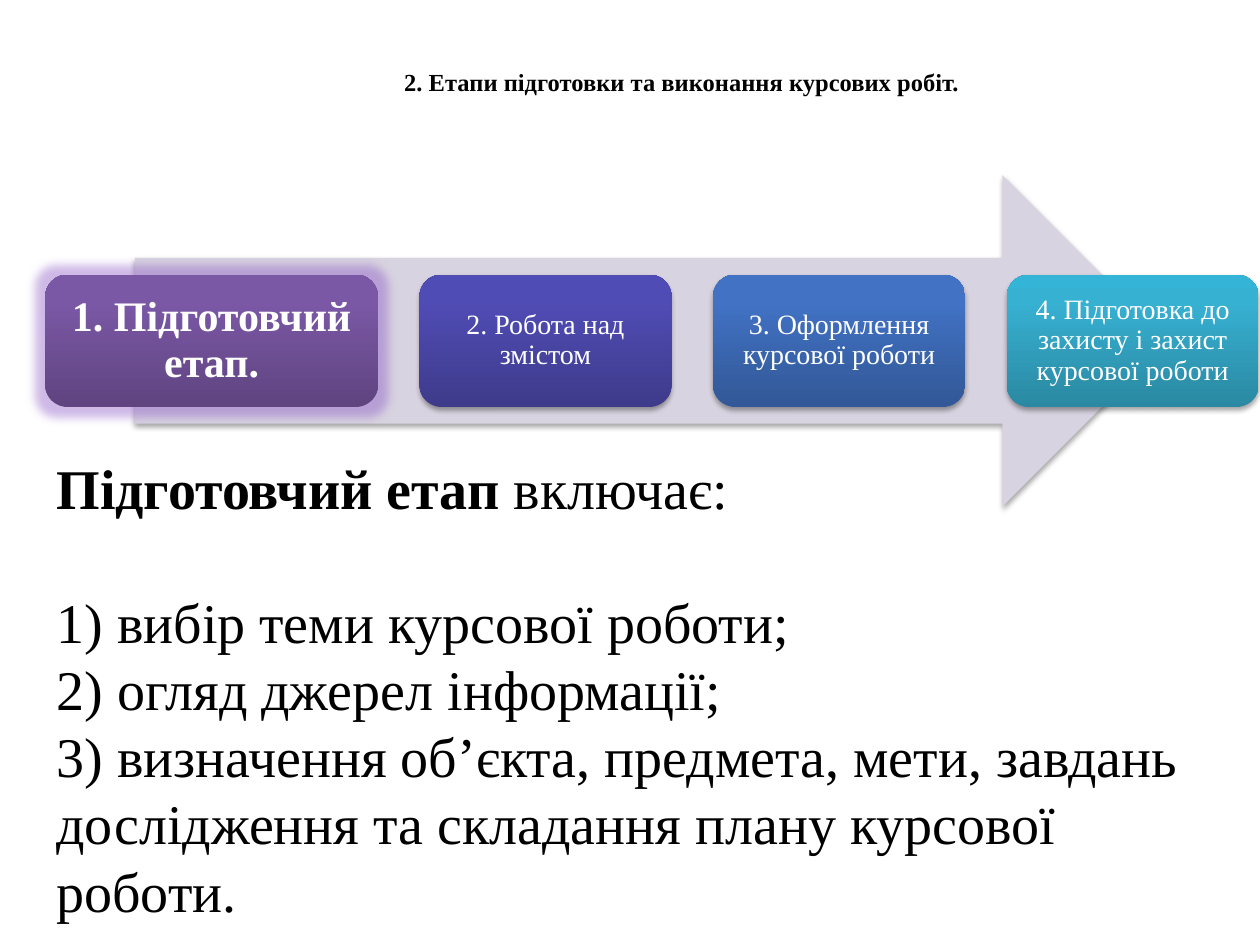
from lxml import etree
from pptx import Presentation
from pptx.dml.color import RGBColor
from pptx.enum import shapes, text
from pptx.oxml import ns
from pptx.util import Inches, Pt

FONT = "Times New Roman"
COLORS = {"arrow": "D8D3E0", "ink": "000000", "light": "FFFFFF", "glow": "8650C4"}
TITLE = "2. Етапи підготовки та виконання курсових робіт."
# Stage label and its gradient from bottom to top
STAGES = [
    ("1. Підготовчий етап.", ("5F4480", "7B58A6", "7C57A8")),
    ("2. Робота над змістом", ("3E3B8B", "504CB5", "4F4BB8")),
    ("3. Оформлення курсової роботи", ("325897", "4172C4", "3F72C7")),
    ("4. Підготовка до захисту і захист курсової роботи",
     ("2A88A2", "37B1D2", "34B4D6")),
]
HEAD = [("Підготовчий етап ", True), ("включає:", False)]
TASKS = [
    "1) вибір теми курсової роботи;",
    "2) огляд джерел інформації;",
    "3) визначення об’єкта, предмета, мети, завдань дослідження "
    "та складання плану курсової роботи.",
]
ALIGN, ANCHOR = text.PP_ALIGN, text.MSO_ANCHOR


def write(frame, paras, size, color="ink", align=ALIGN.LEFT,
          anchor=ANCHOR.TOP, inset=(0.1, 0.05), line=None):
    """Fill a frame; each paragraph is a list of (text, bold) runs."""
    frame.word_wrap = True
    frame.vertical_anchor = anchor
    frame.margin_left = frame.margin_right = Inches(inset[0])
    frame.margin_top = frame.margin_bottom = Inches(inset[1])
    for i, runs in enumerate(paras):
        para = frame.add_paragraph() if i else frame.paragraphs[0]
        para.alignment = align
        if line:
            para.line_spacing = line
        for words, bold in runs:
            run = para.add_run()
            run.text = words
            font = run.font
            font.name, font.size, font.bold = FONT, Pt(size), bold
            font.color.rgb = RGBColor.from_string(COLORS[color])


def add_xml(shape, body):
    root = etree.fromstring(f'<r {ns.nsdecls("a")}>{body}</r>')
    return shape._element.spPr, root[0]


def effect(shape, glow=False):
    """Give a soft drop shadow, or a glow for the current stage."""
    if glow:
        inner = (f'<a:glow rad="{Pt(11)}"><a:srgbClr val="{COLORS["glow"]}">'
                 '<a:alpha val="40000"/></a:srgbClr></a:glow>')
    else:
        inner = (f'<a:outerShdw blurRad="{Pt(3.1)}" dist="{Pt(1.8)}" dir="5400000" '
                 f'rotWithShape="0"><a:srgbClr val="{COLORS["ink"]}">'
                 '<a:alpha val="35000"/></a:srgbClr></a:outerShdw>')
    props, node = add_xml(shape, f"<a:effectLst>{inner}</a:effectLst>")
    props.append(node)


def shade(shape, colors):
    stops = "".join(f'<a:gs pos="{pos * 1000}"><a:srgbClr val="{c}"/></a:gs>'
                    for pos, c in zip((0, 80, 100), colors))
    props, node = add_xml(shape, f'<a:gradFill rotWithShape="1"><a:gsLst>{stops}'
                          '</a:gsLst><a:lin ang="16200000" scaled="0"/></a:gradFill>')
    props.find(ns.qn("a:prstGeom")).addnext(node)


prs = Presentation()
prs.slide_width, prs.slide_height = Inches(10), Inches(7.5)
slide = prs.slides.add_slide(prs.slide_layouts[6])


def add_box(x, y, w, h):
    return slide.shapes.add_textbox(Inches(x), Inches(y), Inches(w), Inches(h)).text_frame


def add_form(kind, x, y, w, h):
    form = slide.shapes.add_shape(kind, Inches(x), Inches(y), Inches(w), Inches(h))
    form.line.fill.background()
    return form


# Arrow behind the stages
KIND = shapes.MSO_SHAPE
arrow = add_form(KIND.RIGHT_ARROW, 1.07, 1.39, 8.2, 2.63)
arrow.fill.solid()
arrow.fill.fore_color.rgb = RGBColor.from_string(COLORS["arrow"])
effect(arrow)

# Stages from left to right, the current one wider
left, gap = 0.36, 0.33
for i, (label, colors) in enumerate(STAGES):
    now = i == 0
    width = 2.64 if now else 2
    stage = add_form(KIND.ROUNDED_RECTANGLE, left, 2.18, width, 1.05)
    shade(stage, colors)
    effect(stage, glow=now)
    pad = 0.1 if now else 0.07
    write(stage.text_frame, [[(label, now)]], 24 if now else 16, color="light",
          align=ALIGN.CENTER, anchor=ANCHOR.MIDDLE, inset=(pad, pad), line=0.9)
    left += width + gap

# Title
write(add_box(3.11, 0.48, 6.69, 0.34), [[(TITLE, True)]], 14,
      align=ALIGN.JUSTIFY, anchor=ANCHOR.MIDDLE)

# What the current stage includes
body = add_box(0.35, 3.55, 9.29, 3.87)
write(body, [HEAD] + [[(task, False)] for task in TASKS], 32)
body.paragraphs[0].space_after = Pt(38)

prs.save("out.pptx")
